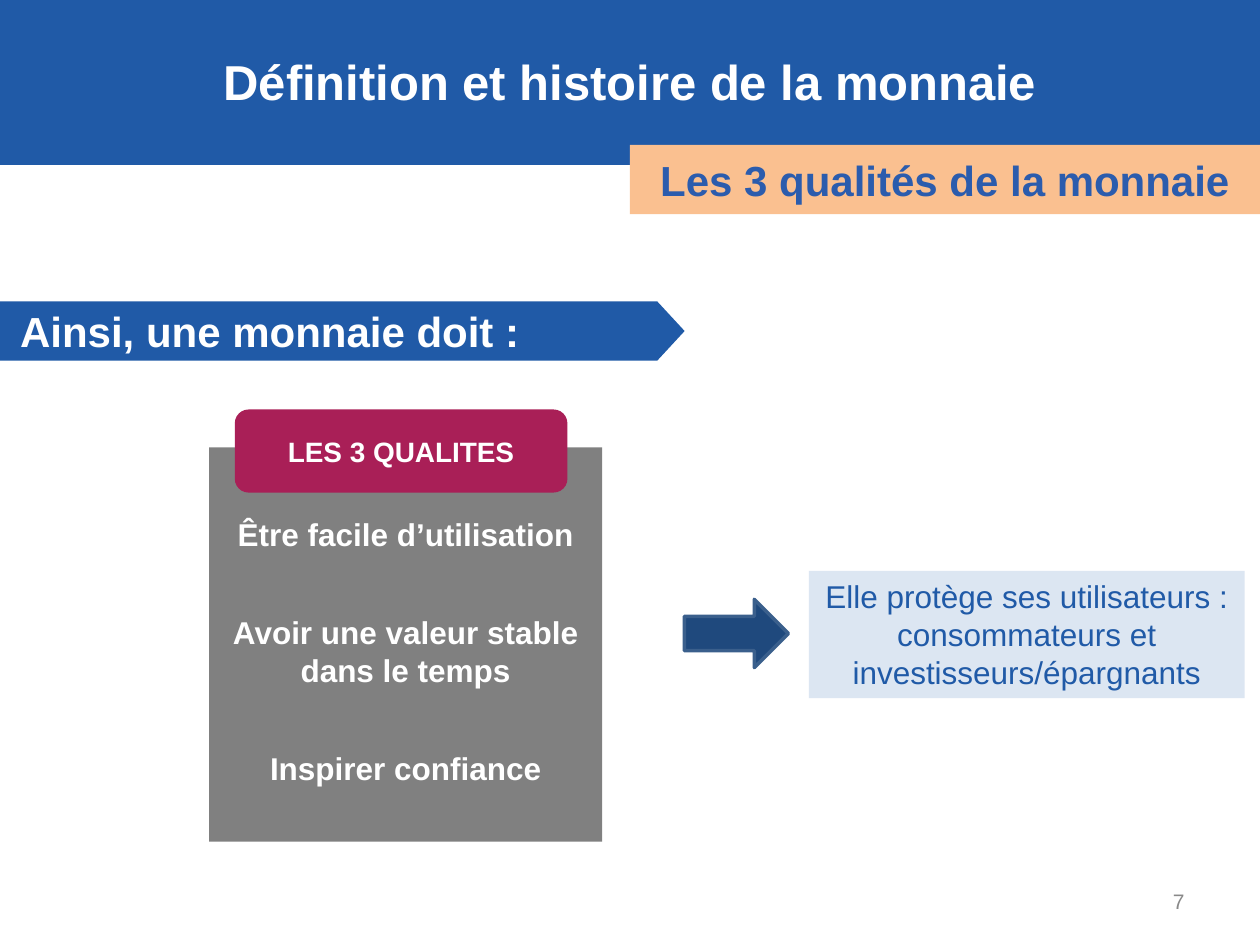
from dataclasses import dataclass
from typing import Optional

import pptx
import pptx.dml.color
import pptx.enum.shapes
import pptx.enum.text
import pptx.util

Pt = pptx.util.Pt
RGBColor = pptx.dml.color.RGBColor
SHAPE = pptx.enum.shapes.MSO_SHAPE
ALIGN = pptx.enum.text.PP_ALIGN
ANCHOR = pptx.enum.text.MSO_ANCHOR

BLUE = RGBColor(0x20, 0x5A, 0xA7)
HEADING_BLUE = RGBColor(0x2B, 0x5C, 0xAD)
NAVY = RGBColor(0x1F, 0x49, 0x7D)
NAVY_EDGE = RGBColor(0x3A, 0x5F, 0x8C)
PALE_BLUE = RGBColor(0xDC, 0xE6, 0xF2)
PEACH = RGBColor(0xFA, 0xC0, 0x90)
GREY = RGBColor(0x80, 0x80, 0x80)
NUMBER_GREY = RGBColor(0x89, 0x89, 0x89)
CRIMSON = RGBColor(0xA9, 0x1F, 0x57)
WHITE = RGBColor(0xFF, 0xFF, 0xFF)

NO_INSETS = (0, 0, 0, 0)
INSETS = (7.2, 3.6, 7.2, 3.6)


@dataclass
class Label:
    paragraphs: tuple[str, ...]
    size: float
    color: RGBColor = WHITE
    bold: bool = True
    align: ALIGN = ALIGN.CENTER
    anchor: ANCHOR = ANCHOR.MIDDLE
    insets: tuple[float, float, float, float] = NO_INSETS
    gap: float = 0


@dataclass
class Box:
    """Left, top, width and height in points; no fill means a text box."""
    at: tuple[float, float, float, float]
    fill: Optional[RGBColor] = None
    label: Optional[Label] = None
    kind: SHAPE = SHAPE.RECTANGLE
    line: Optional[RGBColor] = None


BOXES = [
    # Title band, page number and title
    Box((0, 0, 720, 94.3), BLUE),
    Box((516.2, 500.4, 167.8, 28.8), label=Label(
        ("7",), 12, NUMBER_GREY, False, ALIGN.RIGHT, insets=INSETS)),
    Box((0, 25.9, 720, 41), label=Label(
        ("Définition et histoire de la monnaie",), 28,
        anchor=ANCHOR.TOP, insets=INSETS)),
    # Lead-in banner with its point
    Box((360, 172.3, 31.2, 33.8), BLUE, kind=SHAPE.PENTAGON),
    Box((0, 172.3, 360, 33.8), BLUE, Label(
        ("Ainsi, une monnaie doit :",), 24,
        align=ALIGN.LEFT, insets=(11.5, 0, 0, 0))),
    # Arrow and consequence
    Box((391, 342.5, 59.5, 39), NAVY, kind=SHAPE.RIGHT_ARROW, line=NAVY_EDGE),
    Box((462.2, 326.2, 249.1, 72.7), PALE_BLUE, Label(
        ("Elle protège ses utilisateurs : consommateurs et "
         "investisseurs/épargnants",), 18, BLUE, False,
        anchor=ANCHOR.TOP, insets=INSETS)),
    # Section heading
    Box((360, 82.8, 360, 39.6), PEACH, Label(
        ("Les 3 qualités de la monnaie",), 24, HEADING_BLUE)),
    # The three qualities and their tab
    Box((119.5, 255.6, 224.6, 225.4), GREY, Label(
        ("Être facile d’utilisation", "Avoir une valeur stable dans le temps",
         "Inspirer confiance"), 18,
        anchor=ANCHOR.TOP, insets=(7.2, 38.5, 7.2, 3.6), gap=34.5)),
    Box((134.2, 234, 190.1, 47.5), CRIMSON, Label(("LES 3 QUALITES",), 16),
        kind=SHAPE.ROUNDED_RECTANGLE),
]


def write(tf: pptx.text.text.TextFrame, label: Label) -> None:
    tf.word_wrap = True
    tf.vertical_anchor = label.anchor
    (tf.margin_left, tf.margin_top,
     tf.margin_right, tf.margin_bottom) = map(Pt, label.insets)
    for i, text in enumerate(label.paragraphs):
        p = tf.add_paragraph() if i else tf.paragraphs[0]
        p.alignment = label.align
        if i:
            p.space_before = Pt(label.gap)
        r = p.add_run()
        r.text = text
        r.font.name = "Arial"
        r.font.size = Pt(label.size)
        r.font.bold = label.bold
        r.font.color.rgb = label.color


def draw(s: pptx.slide.Slide, box: Box) -> None:
    at = map(Pt, box.at)
    if box.fill is None:
        sp = s.shapes.add_textbox(*at)
    else:
        sp = s.shapes.add_shape(box.kind, *at)
        sp.shadow.inherit = False
        sp.fill.solid()
        sp.fill.fore_color.rgb = box.fill
        if box.line is None:
            sp.line.fill.background()
        else:
            sp.line.color.rgb = box.line
            sp.line.width = Pt(2)
    if box.label:
        write(sp.text_frame, box.label)


def main() -> None:
    prs = pptx.Presentation()
    prs.slide_width, prs.slide_height = Pt(720), Pt(540)
    s = prs.slides.add_slide(prs.slide_layouts[6])
    for box in BOXES:
        draw(s, box)
    prs.save("out.pptx")


if __name__ == "__main__":
    main()
